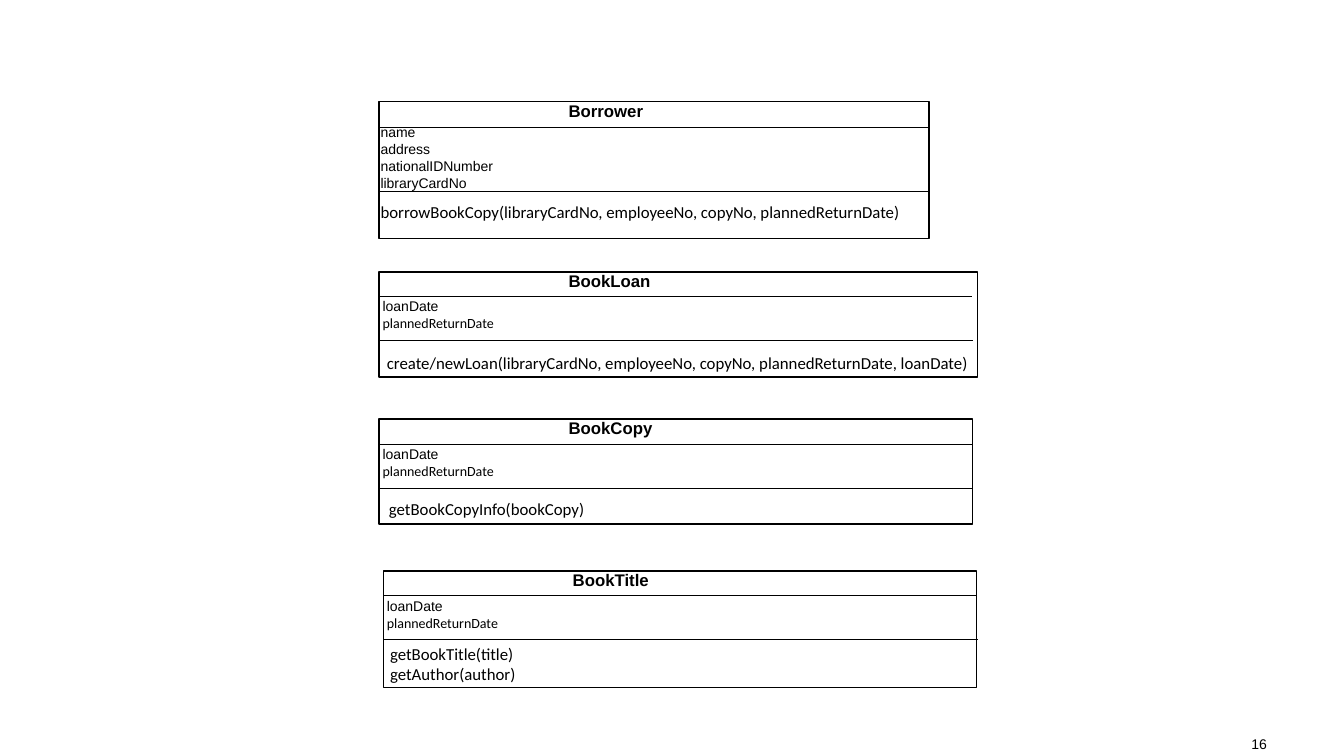
import pptx
import pptx.util
import pptx.dml.color
import pptx.enum.shapes
import pptx.enum.text
import lxml.etree

PX = 9525
BLACK = "000000"
WHITE = "FFFFFF"


def color(value):
    return pptx.dml.color.RGBColor.from_string(value)


def add_text(s, x, y, w, h, lines, size, bold=False):
    tb = s.shapes.add_textbox(x * PX, y * PX, w * PX, h * PX)
    tf = tb.text_frame
    tf.word_wrap = True
    for i, (text, font) in enumerate(lines):
        p = tf.paragraphs[0] if i == 0 else tf.add_paragraph()
        p.text = text
        p.font.name = font
        p.font.size = pptx.util.Pt(size)
        p.font.bold = bold
        p.font.color.rgb = color(BLACK)
    return tf


prs = pptx.Presentation()
prs.slide_width = 1280 * PX
prs.slide_height = 720 * PX
s = prs.slides.add_slide(prs.slide_layouts[6])

borrower_fields = [(t, "Arial") for t in ("name", "address", "nationalIDNumber", "libraryCardNo")]
loan_fields = [("loanDate", "Arial"), ("plannedReturnDate", "Calibri")]

classes = [
    ("Borrower", (361, 97, 524, 130), [(361, 121, 525), (361, 182, 525)],
     (353, 113, borrower_fields),
     [(353, 187, 573, "borrowBookCopy(libraryCardNo, employeeNo, copyNo, plannedReturnDate)")]),
    ("BookLoan", (361, 259, 570, 100), [(361, 282, 565), (362, 324, 565)],
     (355, 279, loan_fields),
     [(359, 331, 602, "create/newLoan(libraryCardNo, employeeNo, copyNo, plannedReturnDate, loanDate)")]),
    ("BookCopy", (361, 399, 565, 100), [(361, 423, 565), (362, 465, 565)],
     (355, 420, loan_fields),
     [(361, 470, 229, "getBookCopyInfo(bookCopy)")]),
    ("BookTitle", (365, 544, 565, 111), [(365, 567, 565), (366, 609, 565)],
     (359, 564, loan_fields),
     [(362, 608, 229, "getBookTitle(title)"), (362, 627, 229, "getAuthor(author)")]),
]

for name, (x, y, w, h), dividers, (fx, fy, fields), operations in classes:
    sp = s.shapes.add_shape(pptx.enum.shapes.MSO_SHAPE.RECTANGLE, x * PX, y * PX, w * PX, h * PX)
    sp.shadow.inherit = False
    sp.fill.solid()
    sp.fill.fore_color.rgb = color(WHITE)
    sp.line.color.rgb = color(BLACK)
    sp.line.width = pptx.util.Pt(1)

    for dx, dy, dw in dividers:
        line = s.shapes.add_connector(
            pptx.enum.shapes.MSO_CONNECTOR.STRAIGHT, dx * PX, dy * PX, (dx + dw) * PX, dy * PX)
        line.line.color.rgb = color(BLACK)
        line.line.width = pptx.util.Pt(0.5)
        lxml.etree.SubElement(line._element.spPr, pptx.oxml.ns.qn("a:effectLst"))

    add_text(s, x + 171, y - 6, 132, 29, [(name, "Arial")], 12, True)
    add_text(s, fx, fy, 143, 10 + 16 * len(fields), fields, 10)
    for ox, oy, ow, text in operations:
        add_text(s, ox, oy, ow, 29, [(text, "Calibri")], 12)

tf = add_text(s, 1114, 696, 102, 24, [("16", "Arial")], 10)
tf.vertical_anchor = pptx.enum.text.MSO_ANCHOR.MIDDLE
tf.paragraphs[0].alignment = pptx.enum.text.PP_ALIGN.RIGHT

prs.save("out.pptx")
